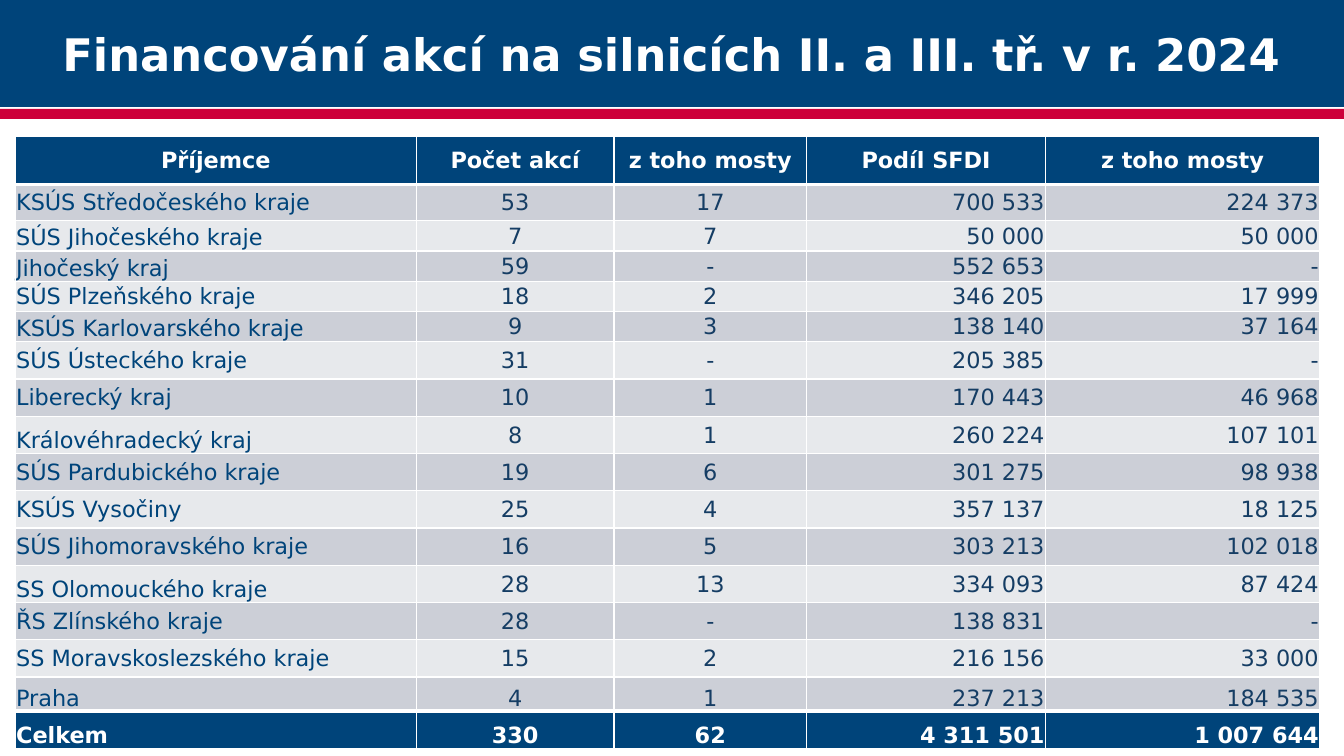
from lxml import etree
from pptx import Presentation
from pptx.dml.color import RGBColor
from pptx.enum.shapes import MSO_SHAPE
from pptx.enum.text import MSO_ANCHOR, PP_ALIGN
from pptx.oxml.ns import qn
from pptx.util import Inches, Pt

RECTANGLE = MSO_SHAPE.RECTANGLE
MIDDLE, BOTTOM = MSO_ANCHOR.MIDDLE, MSO_ANCHOR.BOTTOM
LEFT, CENTER, RIGHT = PP_ALIGN.LEFT, PP_ALIGN.CENTER, PP_ALIGN.RIGHT

TITLE = "Financování akcí na silnicích II. a III. tř. v r. 2024"
ROWS = [
    ("Příjemce", "Počet akcí", "z toho mosty", "Podíl SFDI", "z toho mosty"),
    ("KSÚS Středočeského kraje", "53", "17", "700 533", "224 373"),
    ("SÚS Jihočeského kraje", "7", "7", "50 000", "50 000"),
    ("Jihočeský kraj", "59", "-", "552 653", "-"),
    ("SÚS Plzeňského kraje", "18", "2", "346 205", "17 999"),
    ("KSÚS Karlovarského kraje", "9", "3", "138 140", "37 164"),
    ("SÚS Ústeckého kraje", "31", "-", "205 385", "-"),
    ("Liberecký kraj", "10", "1", "170 443", "46 968"),
    ("Královéhradecký kraj", "8", "1", "260 224", "107 101"),
    ("SÚS Pardubického kraje", "19", "6", "301 275", "98 938"),
    ("KSÚS Vysočiny", "25", "4", "357 137", "18 125"),
    ("SÚS Jihomoravského kraje", "16", "5", "303 213", "102 018"),
    ("SS Olomouckého kraje", "28", "13", "334 093", "87 424"),
    ("ŘS Zlínského kraje", "28", "-", "138 831", "-"),
    ("SS Moravskoslezského kraje", "15", "2", "216 156", "33 000"),
    ("Praha", "4", "1", "237 213", "184 535"),
    ("Celkem", "330", "62", "4 311 501", "1 007 644"),
]
LAST = len(ROWS) - 1
COLUMN_WIDTHS = [3.98, 1.96, 1.91, 2.37, 2.72]
ROW_HEIGHTS = [0.48, 0.36] + [0.3] * 4 + [0.37] * 9 + [0.34, 0.37]
ALIGNMENTS = [LEFT, CENTER, CENTER, RIGHT, RIGHT]
LOW_NAMES = {2, 3, 5, 8, 12}  # rows whose name sits at the cell bottom
LOW_ROWS = {LAST - 1, LAST}

THEME = {
    "font": "DejaVu Sans", "title_size": 32, "table_size": 16,
    "navy": "00447A", "red": "CD003A", "white": "FFFFFF", "figures": "153D64",
    "bands": ("E7E9EC", "CCCFD7"), "thin": 1, "thick": 3,
}


def style_text(paragraph, size, color, bold, alignment):
    paragraph.alignment = alignment
    font = paragraph.font
    font.name, font.size, font.bold = THEME["font"], Pt(size), bold
    font.color.rgb = RGBColor.from_string(color)


def add_band(slide, top, height, color):
    """Add a filled rectangle across the full slide width."""
    band = slide.shapes.add_shape(
        RECTANGLE, 0, Inches(top), Inches(13.33), Inches(height))
    band.shadow.inherit = False
    band.fill.solid()
    band.fill.fore_color.rgb = RGBColor.from_string(color)
    band.line.fill.background()
    return band


def add_borders(cell, top, bottom):
    properties = cell._tc.get_or_add_tcPr()
    thin = THEME["thin"]
    for side, width in (("L", thin), ("R", thin), ("T", top), ("B", bottom)):
        line = etree.SubElement(properties, qn("a:ln" + side), w=str(Pt(width)))
        fill = etree.SubElement(line, qn("a:solidFill"))
        etree.SubElement(fill, qn("a:srgbClr"), val=THEME["white"])


def fill_cell(cell, text, row, column):
    strong = row in (0, LAST)
    thin, thick = THEME["thin"], THEME["thick"]
    add_borders(cell, thick if row in (1, LAST) else thin,
                thick if row in (0, LAST - 1) else thin)
    cell.fill.solid()
    cell.fill.fore_color.rgb = RGBColor.from_string(
        THEME["navy"] if strong else THEME["bands"][row % 2])
    cell.margin_left = cell.margin_right = cell.margin_top = Inches(0.01)
    cell.margin_bottom = 0
    low = row in LOW_ROWS or (column == 0 and row in LOW_NAMES)
    cell.vertical_anchor = BOTTOM if low else MIDDLE
    color = THEME["white"] if strong else THEME["figures" if column else "navy"]
    cell.text = text
    style_text(cell.text_frame.paragraphs[0], THEME["table_size"], color, strong,
               ALIGNMENTS[column] if row else CENTER)


def add_funding_table(slide):
    frame = slide.shapes.add_table(
        len(ROWS), len(COLUMN_WIDTHS), Inches(0.15), Inches(1.35),
        Inches(sum(COLUMN_WIDTHS)), Inches(sum(ROW_HEIGHTS)))
    table = frame.table
    for column, width in zip(table.columns, COLUMN_WIDTHS):
        column.width = Inches(width)
    for row, height in zip(table.rows, ROW_HEIGHTS):
        row.height = Inches(height)
    for row, texts in enumerate(ROWS):
        for column, text in enumerate(texts):
            fill_cell(table.cell(row, column), text, row, column)


def main():
    deck = Presentation()
    deck.slide_width, deck.slide_height = Inches(13.33), Inches(7.5)
    slide = deck.slides.add_slide(deck.slide_layouts[6])
    add_band(slide, 1.08, 0.1, THEME["red"])
    title = add_band(slide, 0, 1.06, THEME["navy"]).text_frame
    title.text = TITLE
    title.word_wrap = True
    title.vertical_anchor = MIDDLE
    style_text(title.paragraphs[0], THEME["title_size"], THEME["white"], True, CENTER)
    add_funding_table(slide)
    deck.save("out.pptx")


if __name__ == "__main__":
    main()
